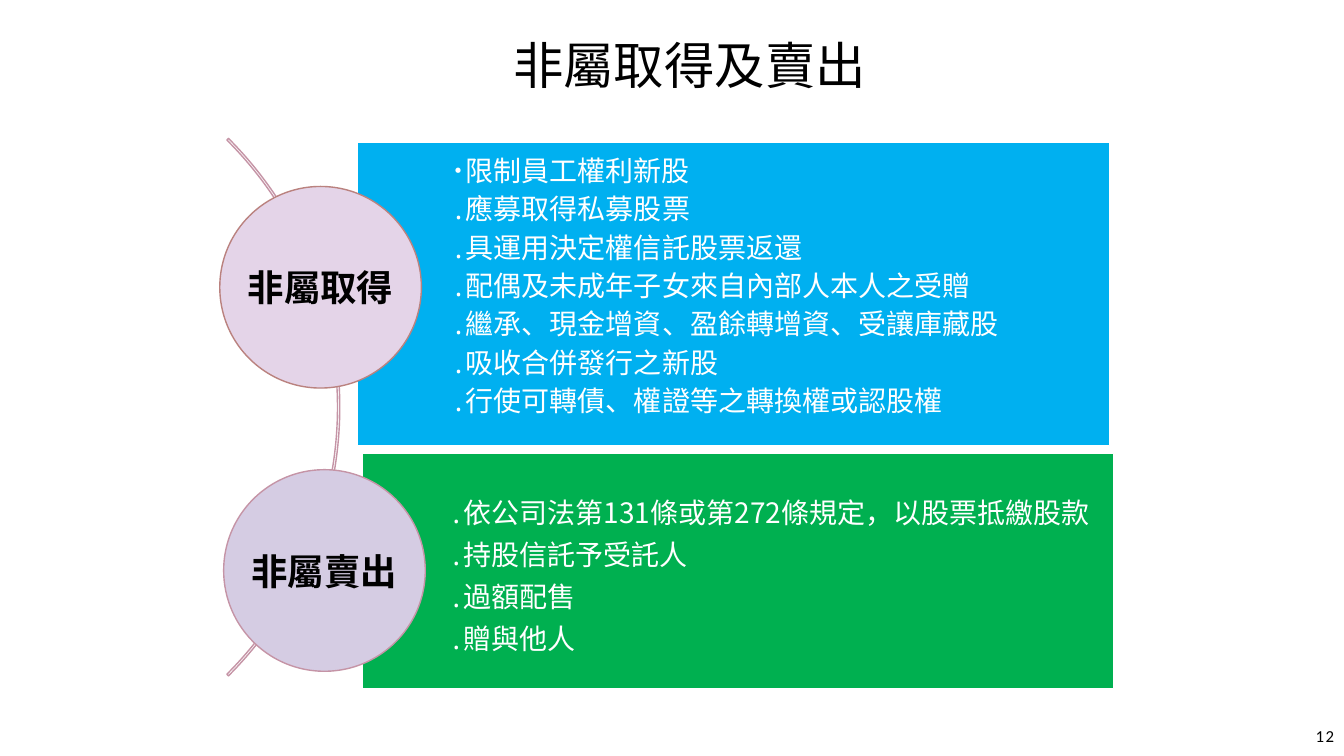
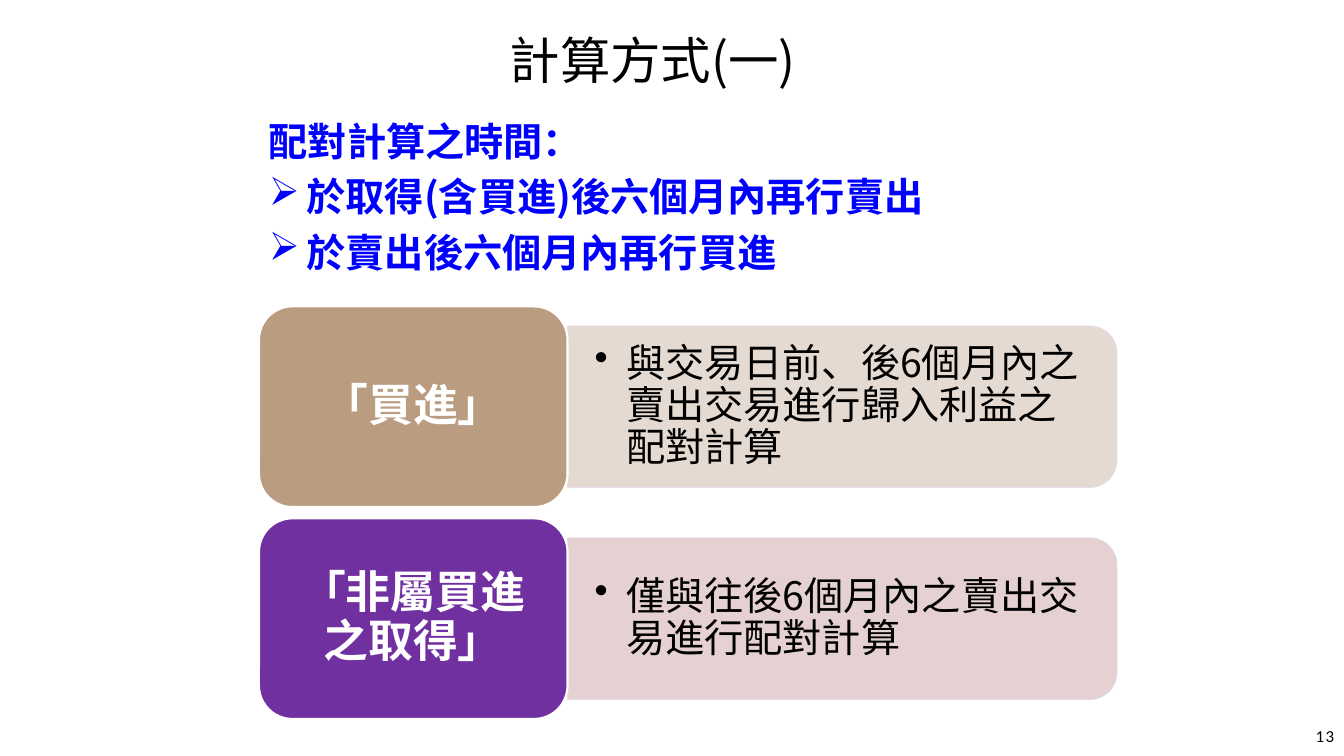
"""Build two slides on acquisitions, sales and the matching calculation."""
from lxml.etree import SubElement
from pptx import Presentation
from pptx.dml.color import RGBColor
from pptx.enum.shapes import MSO_SHAPE
from pptx.enum.text import MSO_ANCHOR, MSO_AUTO_SIZE, PP_ALIGN
from pptx.oxml.ns import qn
from pptx.util import Pt

CJK_FONT = "Noto Sans CJK SC"
BLACK = RGBColor(0x00, 0x00, 0x00)
WHITE = RGBColor(0xFF, 0xFF, 0xFF)
BLUE = RGBColor(0x00, 0x00, 0xFF)
SKY = RGBColor(0x00, 0xB0, 0xF0)
GREEN = RGBColor(0x00, 0xB0, 0x50)
PINK = RGBColor(0xE4, 0xD4, 0xE8)
LILAC = RGBColor(0xD5, 0xCC, 0xE3)
ROSE_LINE = RGBColor(0xBA, 0x82, 0x7F)
MAUVE_LINE = RGBColor(0xC5, 0x94, 0xA6)
TAN = RGBColor(0xBA, 0x9C, 0x80)
PURPLE = RGBColor(0x70, 0x30, 0xA0)
PALE_TAN = RGBColor(0xE3, 0xD7, 0xCC)
PALE_ROSE = RGBColor(0xE3, 0xCD, 0xCC)
PALE_TAN_LINE = RGBColor(0xE7, 0xDC, 0xEA)
PALE_ROSE_LINE = RGBColor(0xDD, 0xD8, 0xE7)


def draw(slide, kind, box, fill, line, line_width):
    shape = slide.shapes.add_shape(kind, *map(Pt, box))
    shape.shadow.inherit = False
    if fill is None:
        shape.fill.background()
    else:
        shape.fill.solid()
        shape.fill.fore_color.rgb = fill
    shape.line.color.rgb = line
    shape.line.width = Pt(line_width)
    return shape


def write(shape, lines, color, frame_format, paragraph_format, font_format,
          indent=0, hang=0, bullet=None, first_bullet=0):
    frame = shape.text_frame
    for name, value in frame_format.items():
        setattr(frame, name, value)
    for index, line in enumerate(lines):
        paragraph = frame.add_paragraph() if index else frame.paragraphs[0]
        for name, value in paragraph_format.items():
            setattr(paragraph, name, value)
        properties = paragraph._p.get_or_add_pPr()
        if index >= first_bullet:
            properties.set("marL", str(Pt(indent)))
            properties.set("indent", str(Pt(-hang)))
            if bullet:
                SubElement(properties, qn("a:buChar"), char=bullet)
        run = paragraph.add_run()
        run.text = line
        for name, value in ({"name": CJK_FONT} | font_format).items():
            setattr(run.font, name, value)
        run.font.color.rgb = color
        SubElement(run._r.get_or_add_rPr(), qn("a:ea"), typeface=CJK_FONT)


TOP = {"word_wrap": True, "auto_size": MSO_AUTO_SIZE.NONE,
       "vertical_anchor": MSO_ANCHOR.TOP,
       "margin_left": Pt(7.2), "margin_right": Pt(7.2),
       "margin_top": Pt(3.6), "margin_bottom": Pt(3.6)}
MIDDLE = TOP | {"vertical_anchor": MSO_ANCHOR.MIDDLE}
LEFT = {"alignment": PP_ALIGN.LEFT}
CENTER = {"alignment": PP_ALIGN.CENTER}
RIGHT = {"alignment": PP_ALIGN.RIGHT}

deck = Presentation()
deck.slide_width, deck.slide_height = Pt(960), Pt(540)

pages = [
    ("非屬取得及賣出", (357.8, 20.9, 269.3, 51.1), "12"),
    ("計算方式(一)", (349.9, 17.3, 232.6, 51.1), "13"),
]
slides = []
for heading, heading_box, number in pages:
    slide = deck.slides.add_slide(deck.slide_layouts[5])
    title = slide.shapes.title
    title.left, title.top, title.width, title.height = map(Pt, heading_box)
    write(title, [heading], BLACK, TOP, CENTER, {"size": Pt(36)})
    page_number = slide.shapes.add_textbox(Pt(792), Pt(511.2), Pt(168), Pt(28.8))
    write(page_number, [number], BLACK, MIDDLE, RIGHT,
          {"name": "Calibri", "size": Pt(12)})
    page_number.text_frame.paragraphs[0].runs[0].font._element.set("spc", "100")
    slides.append(slide)
exclusions, matching = slides

arc = draw(exclusions, MSO_SHAPE.BLOCK_ARC, (-300.2, 19.4, 542.9, 542.9),
           None, MAUVE_LINE, 1)
for index, value in enumerate((189, 27, 0.003)):
    arc.adjustments[index] = value

acquired = [
    "˙限制員工權利新股",
    "․應募取得私募股票",
    "․具運用決定權信託股票返還",
    "․配偶及未成年子女來自內部人本人之受贈",
    "․繼承、現金增資、盈餘轉增資、受讓庫藏股",
    "․吸收合併發行之新股",
    "․行使可轉債、權證等之轉換權或認股權",
]
sold = [
    "․依公司法第131條或第272條規定，以股票抵繳股款",
    "․持股信託予受託人",
    "․過額配售",
    "․贈與他人",
]
groups = [
    ("非屬取得", acquired, (255.6, 101.5, 537.1, 216.7), SKY,
     (157, 133.2), PINK, ROSE_LINE,
     {"margin_left": Pt(67), "margin_top": Pt(8)},
     {"space_after": Pt(3.4)}, 0),
    ("非屬賣出", sold, (258.5, 324, 537.1, 167.8), GREEN,
     (159.8, 335.5), LILAC, MAUVE_LINE,
     {"margin_left": Pt(48.2), "margin_top": Pt(30.2)},
     {"space_after": Pt(6), "line_spacing": Pt(24)}, 14.4),
]
for (name, items, panel_box, panel_fill, corner, circle_fill, circle_line,
     margins, spacing, indent) in groups:
    panel = draw(exclusions, MSO_SHAPE.RECTANGLE, panel_box, panel_fill, WHITE, 1)
    write(panel, items, WHITE, TOP | margins | {"margin_right": Pt(2)},
          LEFT | spacing, {"size": Pt(20)}, indent)
    circle = draw(exclusions, MSO_SHAPE.OVAL, (*corner, 144, 144),
                  circle_fill, circle_line, 1)
    write(circle, [name], BLACK, MIDDLE | {"word_wrap": False}, CENTER,
          {"size": Pt(26), "bold": True})

timing = matching.shapes.add_textbox(Pt(185), Pt(79.9), Pt(635.8), Pt(121))
write(timing,
      ["配對計算之時間：", "於取得(含買進)後六個月內再行賣出", "於賣出後六個月內再行買進"],
      BLUE, TOP, LEFT | {"space_after": Pt(6)}, {"size": Pt(28), "bold": True},
      27, 27, "➢", 1)

ROW_CENTER, ROW_PITCH = 290.5, 151.4
LABEL_LEFT, LABEL_WIDTH, LABEL_HEIGHT = 185, 220.4, 143.3
BAR_LEFT, BAR_LENGTH, BAR_HEIGHT = LABEL_LEFT + LABEL_WIDTH, 392.4, 115.4
DETAIL_WIDTH, DETAIL_HEIGHT = 386.6, 103.7
detail_frame = MIDDLE | {"margin_left": Pt(19.4), "margin_right": Pt(19.4),
                         "margin_top": Pt(10), "margin_bottom": Pt(10)}
label_frame = MIDDLE | {"margin_left": Pt(9.4), "margin_right": Pt(9.4)}
rows = [
    ("「買進」", TAN, "與交易日前、後6個月內之賣出交易進行歸入利益之配對計算",
     PALE_TAN, PALE_TAN_LINE),
    ("「非屬買進之取得」", PURPLE, "僅與往後6個月內之賣出交易進行配對計算",
     PALE_ROSE, PALE_ROSE_LINE),
]
for index, (name, label_fill, rule, bar_fill, bar_line) in enumerate(rows):
    center = ROW_CENTER + index * ROW_PITCH
    bar = draw(matching, MSO_SHAPE.ROUND_2_SAME_RECTANGLE,
               (BAR_LEFT + (BAR_LENGTH - BAR_HEIGHT) / 2, center - BAR_LENGTH / 2,
                BAR_HEIGHT, BAR_LENGTH), bar_fill, bar_line, 0.5)
    bar.rotation = 90
    for tint in bar.element.spPr.iter(qn("a:srgbClr")):
        SubElement(tint, qn("a:alpha"), val="90000")
    detail = matching.shapes.add_textbox(
        Pt(BAR_LEFT), Pt(center - DETAIL_HEIGHT / 2),
        Pt(DETAIL_WIDTH), Pt(DETAIL_HEIGHT))
    write(detail, [rule], BLACK, detail_frame,
          LEFT | {"line_spacing": 0.9, "space_after": Pt(4)},
          {"size": Pt(28)}, 22.5, 22.5, "•")
    label = draw(matching, MSO_SHAPE.ROUNDED_RECTANGLE,
                 (LABEL_LEFT, center - LABEL_HEIGHT / 2, LABEL_WIDTH, LABEL_HEIGHT),
                 label_fill, WHITE, 1.5)
    write(label, [name], WHITE, label_frame,
          CENTER | {"line_spacing": 0.9, "space_after": Pt(6)},
          {"size": Pt(32), "bold": True})

deck.save("out.pptx")
